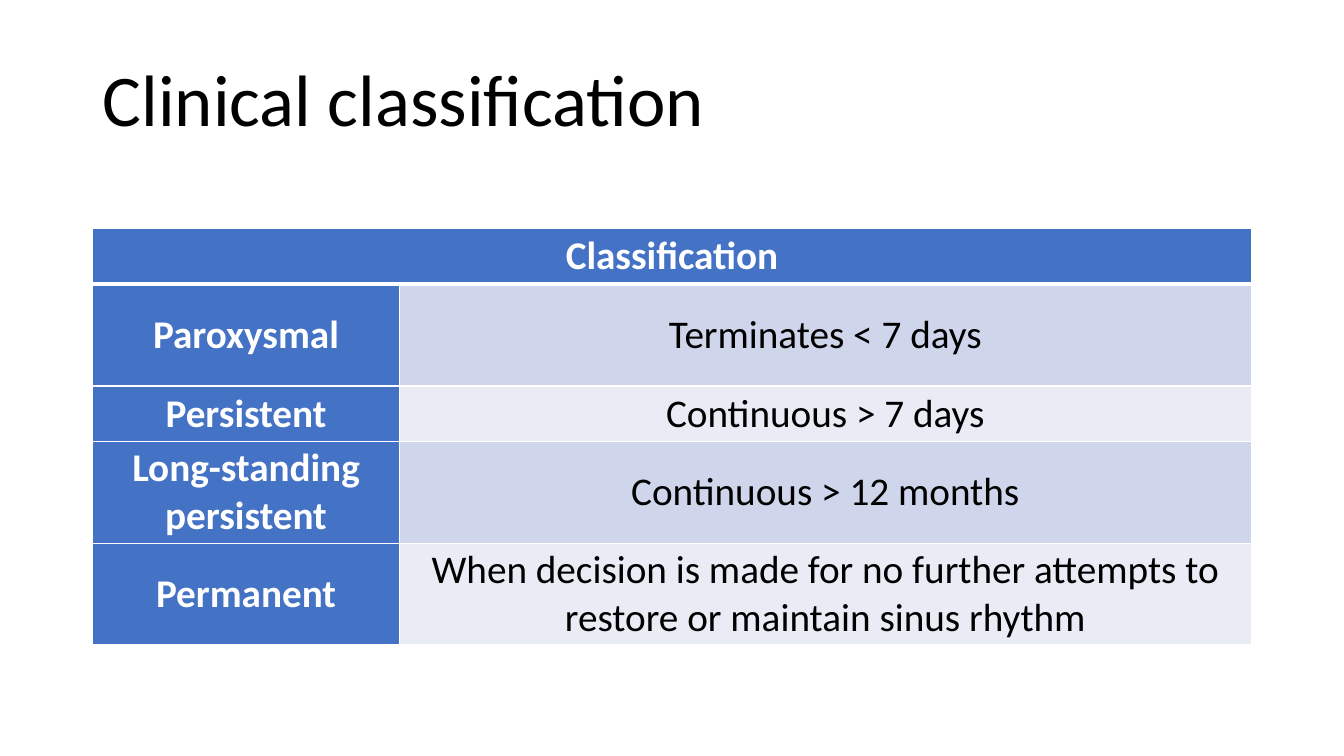
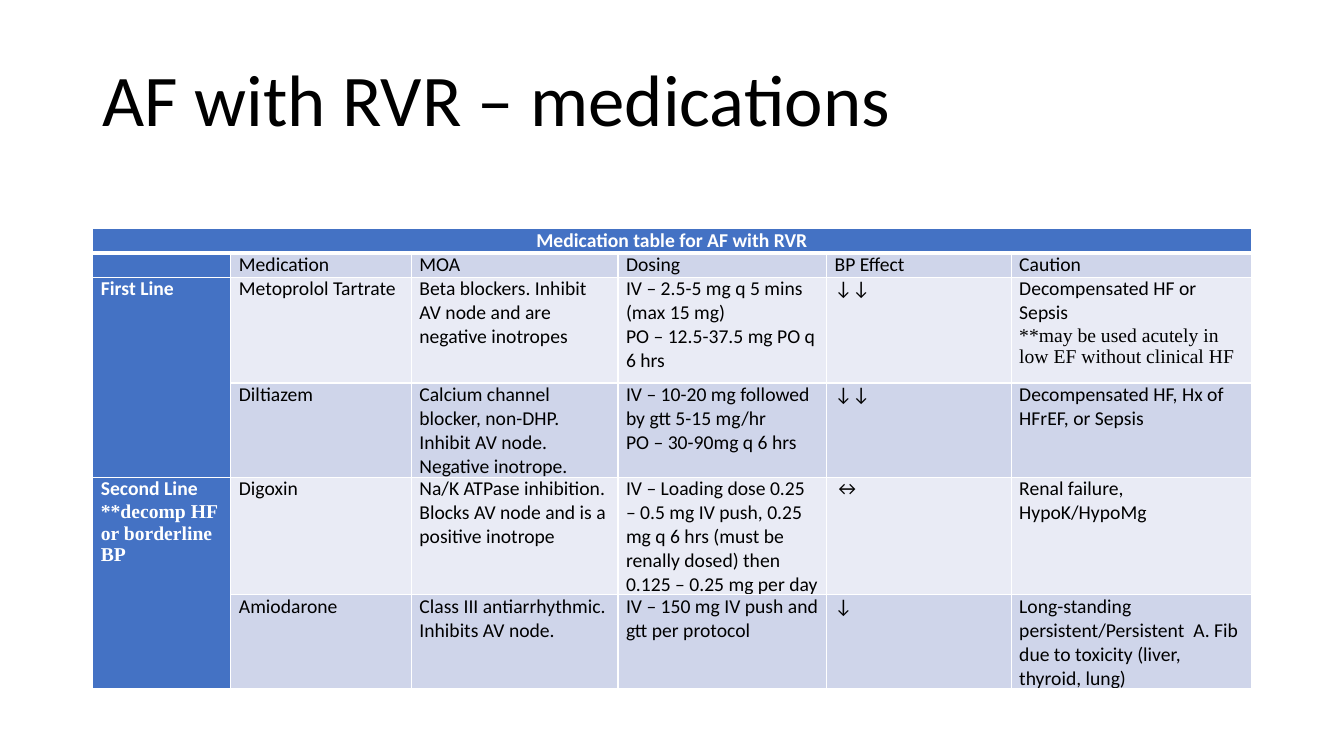
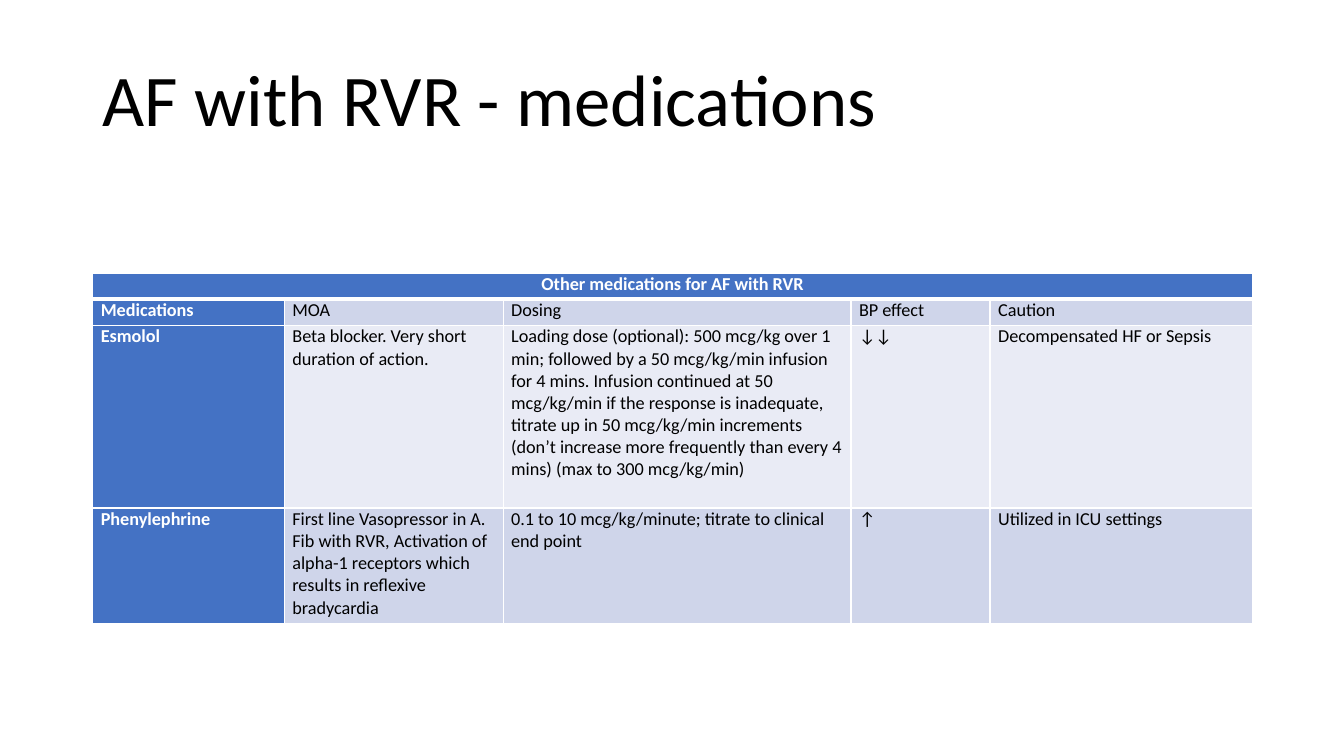
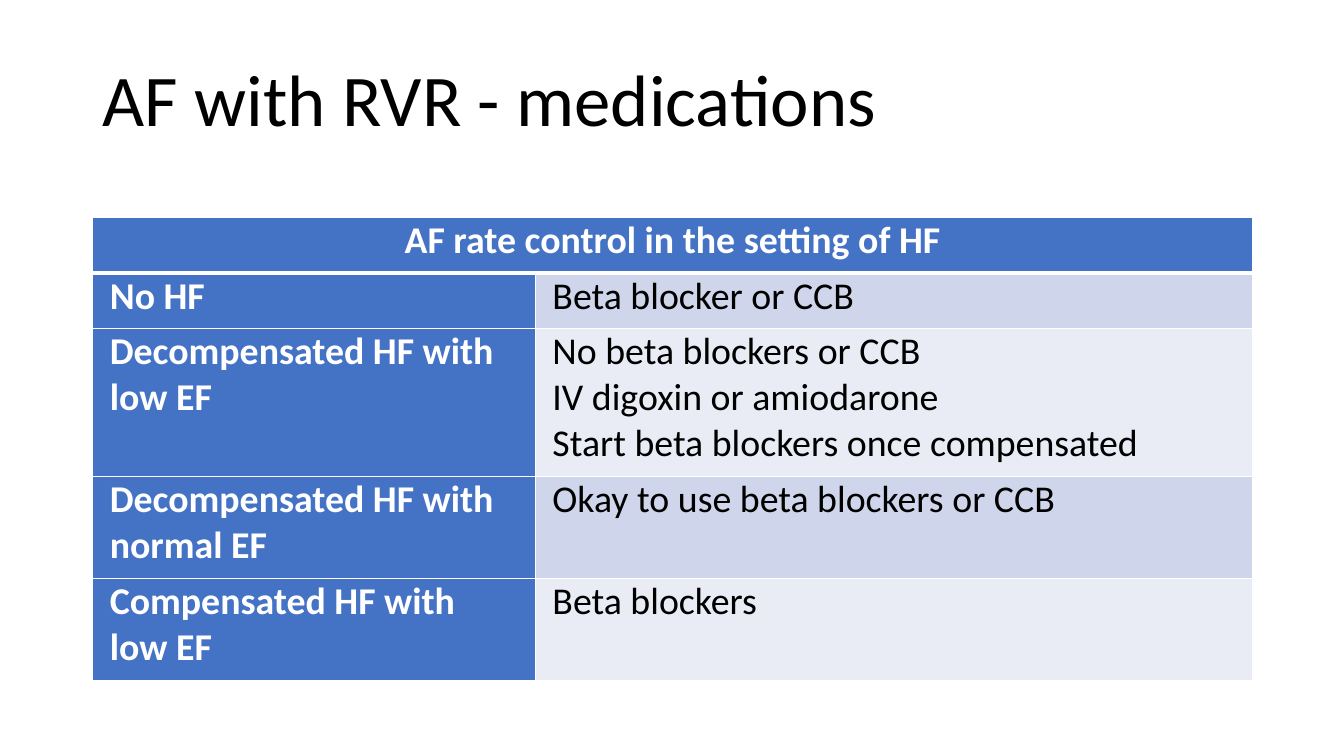
from lxml import etree
from pptx import Presentation
from pptx.dml.color import RGBColor
from pptx.enum.text import MSO_ANCHOR, PP_ALIGN
from pptx.oxml.ns import qn
from pptx.util import Inches, Pt

# Shared style
BLACK = RGBColor(0x00, 0x00, 0x00)
WHITE = RGBColor(0xFF, 0xFF, 0xFF)
BLUE = RGBColor(0x44, 0x72, 0xC4)
DARK_BAND = RGBColor(0xCF, 0xD5, 0xEA)
LIGHT_BAND = RGBColor(0xE9, 0xEB, 0xF5)
CENTER, LEFT = PP_ALIGN.CENTER, PP_ALIGN.LEFT
MIDDLE, TOP = MSO_ANCHOR.MIDDLE, MSO_ANCHOR.TOP
BODY_FONT, NOTE_FONT = "Calibri", "Times New Roman"
MARGIN, CONTENT_WIDTH = 0.92, 11.5

# Slide contents: the first row spans the table, None continues the cell above
SLIDES = [
    {
        "title": "Clinical classification",
        "top": 2.27, "size": 28, "inset": 0.17, "align": CENTER, "anchor": MIDDLE,
        "columns": [3.04, 8.45],
        "heights": [0.55, 1.01, 0.55, 1.01, 1.01],
        "rows": [
            ["Classification"],
            ["Paroxysmal", "Terminates < 7 days"],
            ["Persistent", "Continuous > 7 days"],
            ["Long-standing persistent", "Continuous > 12 months"],
            ["Permanent", "When decision is made for no further attempts to "
             "restore or maintain sinus rhythm"],
        ],
    },
    {
        "title": "AF with RVR – medications",
        "top": 2.27, "size": 14, "inset": 0.08, "align": LEFT, "anchor": TOP,
        "columns": [1.37, 1.79, 2.05, 2.07, 1.83, 2.38],
        "heights": [0.24, 0.24, 1.05, 0.65, 0.85, 0.85],
        "rows": [
            ["Medication table for AF with RVR"],
            ["", "Medication", "MOA", "Dosing", "BP Effect", "Caution"],
            ["First Line", "Metoprolol Tartrate",
             "Beta blockers. Inhibit AV node and are negative inotropes",
             "IV – 2.5-5 mg q 5 mins (max 15 mg)\nPO – 12.5-37.5 mg PO q 6 hrs",
             "↓↓",
             "Decompensated HF or Sepsis\n"
             "**may be used acutely in low EF without clinical HF"],
            [None, "Diltiazem",
             "Calcium channel blocker, non-DHP. Inhibit AV node. Negative inotrope.",
             "IV – 10-20 mg followed by gtt 5-15 mg/hr\nPO – 30-90mg q 6 hrs",
             "↓↓", "Decompensated HF, Hx of HFrEF, or Sepsis"],
            ["Second Line\n**decomp HF or borderline BP", "Digoxin",
             "Na/K ATPase inhibition. Blocks AV node and is a positive inotrope",
             "IV – Loading dose 0.25 – 0.5 mg IV push, 0.25 mg q 6 hrs "
             "(must be renally dosed) then 0.125 – 0.25 mg per day",
             "↔", "Renal failure, HypoK/HypoMg"],
            [None, "Amiodarone", "Class III antiarrhythmic. Inhibits AV node.",
             "IV – 150 mg IV push and gtt per protocol", "↓",
             "Long-standing persistent/Persistent  A. Fib due to toxicity "
             "(liver, thyroid, lung)"],
        ],
    },
    {
        "title": "AF with RVR - medications",
        "top": 2.71, "size": 13, "inset": 0.08, "align": LEFT, "anchor": TOP,
        "columns": [1.9, 2.17, 3.45, 1.38, 2.6],
        "heights": [0.26, 0.26, 1.81, 1.15],
        "rows": [
            ["Other medications for AF with RVR"],
            ["Medications", "MOA", "Dosing", "BP effect", "Caution"],
            ["Esmolol", "Beta blocker. Very short duration of action.",
             "Loading dose (optional): 500 mcg/kg over 1 min; followed by a "
             "50 mcg/kg/min infusion for 4 mins. Infusion continued at "
             "50 mcg/kg/min if the response is inadequate, titrate up in "
             "50 mcg/kg/min increments (don’t increase more frequently than "
             "every 4 mins) (max to 300 mcg/kg/min)",
             "↓↓", "Decompensated HF or Sepsis"],
            ["Phenylephrine",
             "First line Vasopressor in A. Fib with RVR, Activation of alpha-1 "
             "receptors which results in reflexive bradycardia",
             "0.1 to 10 mcg/kg/minute; titrate to clinical end point",
             "↑", "Utilized in ICU settings"],
        ],
    },
    {
        "title": "AF with RVR - medications",
        "top": 2.16, "size": 27, "inset": 0.17, "align": LEFT, "anchor": TOP,
        "columns": [4.39, 7.11],
        "heights": [0.55, 0.55, 1.47, 1.01, 1.01],
        "rows": [
            ["AF rate control in the setting of HF"],
            ["No HF", "Beta blocker or CCB"],
            ["Decompensated HF with low EF",
             "No beta blockers or CCB\nIV digoxin or amiodarone\n"
             "Start beta blockers once compensated"],
            ["Decompensated HF with normal EF", "Okay to use beta blockers or CCB"],
            ["Compensated HF with low EF", "Beta blockers"],
        ],
    },
]


def set_borders(cell, top_width, bottom_width):
    """Give a cell white borders, 1 pt at the sides."""
    properties = cell._tc.get_or_add_tcPr()
    widths = {"a:lnL": 1, "a:lnR": 1, "a:lnT": top_width, "a:lnB": bottom_width}
    for tag, width in widths.items():
        line = etree.SubElement(properties, qn(tag), w=str(Pt(width)))
        fill = etree.SubElement(line, qn("a:solidFill"))
        etree.SubElement(fill, qn("a:srgbClr"), val=str(WHITE))


def format_cell(cell, content, row, column):
    """Style one cell; the first row and column are headings."""
    heading = row == 0 or column == 0
    set_borders(cell, 3 if row == 1 else 1, 3 if row == 0 else 1)
    cell.fill.solid()
    band = DARK_BAND if row % 2 else LIGHT_BAND
    cell.fill.fore_color.rgb = BLUE if heading else band
    cell.margin_left = cell.margin_right = Inches(content["inset"])
    cell.margin_top = cell.margin_bottom = 0
    cell.vertical_anchor = content["anchor"]
    for paragraph in cell.text_frame.paragraphs:
        paragraph.alignment = CENTER if row == 0 else content["align"]
        for run in paragraph.runs:
            run.font.name = NOTE_FONT if run.text.startswith("**") else BODY_FONT
            run.font.size = Pt(content["size"])
            run.font.bold = heading
            run.font.color.rgb = WHITE if heading else BLACK
        # Keeps empty cells from stretching their row
        etree.SubElement(paragraph._p, qn("a:endParaRPr"), sz=str(content["size"] * 100))


presentation = Presentation()
presentation.slide_width = Inches(13.33)
presentation.slide_height = Inches(7.5)
blank_layout = presentation.slide_layouts[6]

for content in SLIDES:
    slide = presentation.slides.add_slide(blank_layout)

    # Title
    title = slide.shapes.add_textbox(
        Inches(MARGIN), Inches(0.2), Inches(CONTENT_WIDTH), Inches(1.65))
    title.text_frame.word_wrap = True
    title.text_frame.vertical_anchor = MIDDLE
    title.text_frame.text = content["title"]
    paragraph = title.text_frame.paragraphs[0]
    paragraph.line_spacing = 0.9
    font = paragraph.runs[0].font
    font.name, font.size, font.color.rgb = BODY_FONT, Pt(52), BLACK

    # Table grid
    columns, heights = content["columns"], content["heights"]
    table = slide.shapes.add_table(
        len(heights), len(columns), Inches(MARGIN), Inches(content["top"]),
        Inches(CONTENT_WIDTH), Inches(sum(heights))).table
    for index, width in enumerate(columns):
        table.columns[index].width = Inches(width)
    for index, height in enumerate(heights):
        table.rows[index].height = Inches(height)

    # Wording and merged cells
    table.cell(0, 0).merge(table.cell(0, len(columns) - 1))
    for row, texts in enumerate(content["rows"]):
        for column, text in enumerate(texts):
            if text is None:
                table.cell(row - 1, column).merge(table.cell(row, column))
            else:
                table.cell(row, column).text_frame.text = text

    # Cell style
    for row in range(len(heights)):
        for column in range(len(columns)):
            format_cell(table.cell(row, column), content, row, column)

presentation.save("out.pptx")
